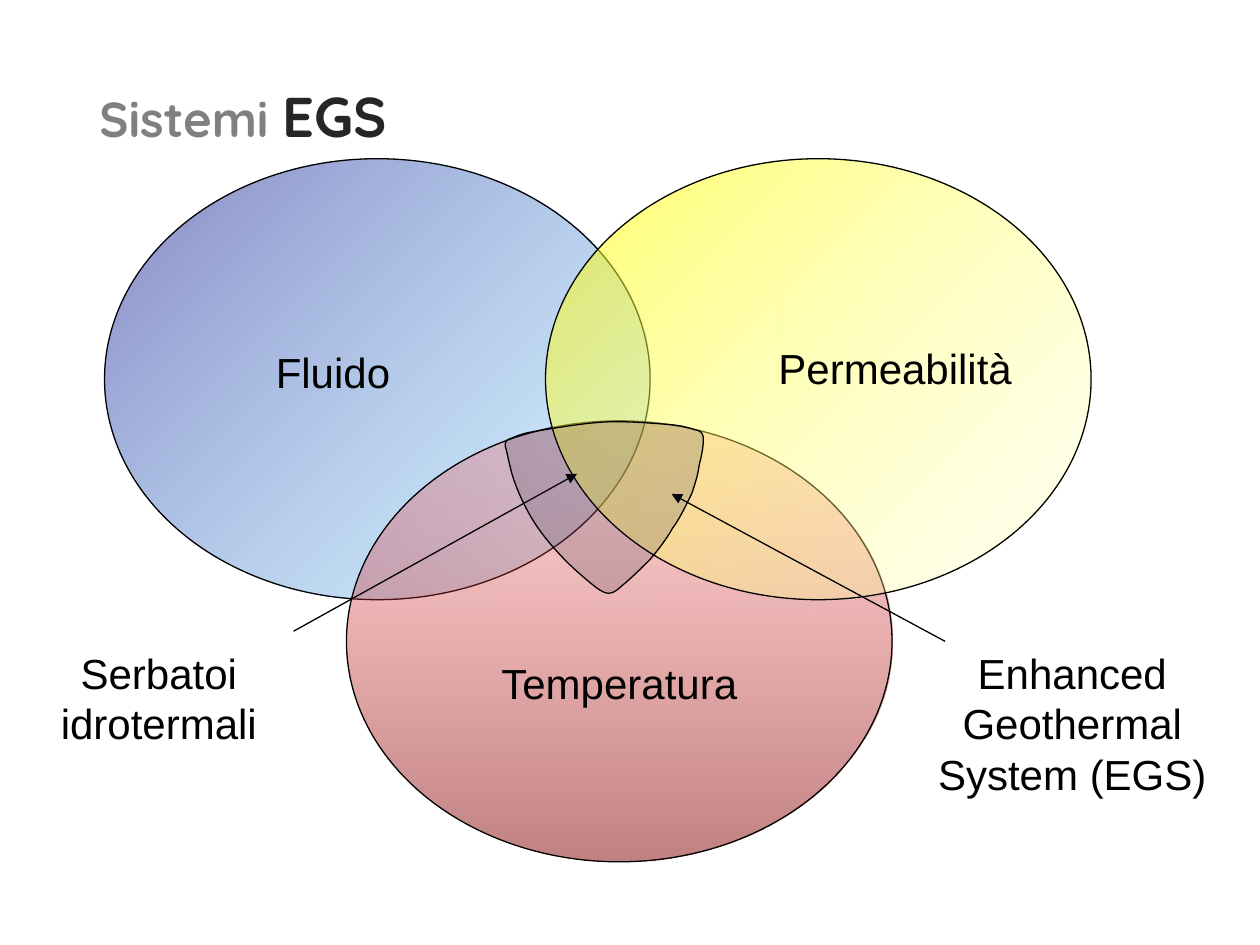
from lxml import etree
from pptx import Presentation
from pptx.dml.color import RGBColor
from pptx.enum.shapes import MSO_CONNECTOR, MSO_SHAPE
from pptx.enum.text import MSO_ANCHOR, MSO_AUTO_SIZE, PP_ALIGN
from pptx.oxml.ns import qn
from pptx.util import Inches, Pt

BLACK = "000000"
CIRCLE_SIZE = (4.33, 3.5)
OVERLAP_START = (4.01, 3.54)
OVERLAP_CURVES = [
    ((4.01, 3.48), (4.04, 3.49), (4.08, 3.47)),
    ((4.13, 3.45), (4.15, 3.44), (4.27, 3.42)),
    ((4.39, 3.4), (4.62, 3.36), (4.79, 3.35)),
    ((4.96, 3.34), (5.19, 3.36), (5.31, 3.37)),
    ((5.42, 3.38), (5.44, 3.39), (5.48, 3.4)),
    ((5.53, 3.42), (5.57, 3.41), (5.58, 3.46)),
    ((5.59, 3.51), (5.57, 3.62), (5.55, 3.69)),
    ((5.54, 3.77), (5.52, 3.83), (5.49, 3.92)),
    ((5.45, 4), (5.4, 4.11), (5.34, 4.19)),
    ((5.29, 4.28), (5.22, 4.37), (5.16, 4.44)),
    ((5.09, 4.51), (5.02, 4.58), (4.96, 4.63)),
    ((4.91, 4.67), (4.88, 4.71), (4.83, 4.71)),
    ((4.79, 4.71), (4.74, 4.67), (4.69, 4.63)),
    ((4.63, 4.58), (4.57, 4.53), (4.5, 4.46)),
    ((4.43, 4.39), (4.34, 4.29), (4.27, 4.19)),
    ((4.2, 4.09), (4.13, 3.95), (4.09, 3.84)),
    ((4.05, 3.74), (4.03, 3.6), (4.01, 3.54)),
]


def rgb(value):
    """Return the colour for a hex string."""
    return RGBColor.from_string(value)


def inches(values):
    """Return each value as a length in inches."""
    return [Inches(value) for value in values]


def set_opacities(shape, opacities):
    """Give the fill colours of a shape their opacities in percent."""
    colors = shape._element.spPr.iter(qn("a:srgbClr"))
    for color, opacity in zip(colors, opacities):
        etree.SubElement(color, qn("a:alpha"), val=str(opacity * 1000))


def style_outline(shape):
    """Draw a thin black outline without a shadow."""
    shape.shadow.inherit = False
    shape.line.color.rgb = rgb(BLACK)
    shape.line.width = Pt(0.75)


def add_run(paragraph, text, size, font="Arial", color=BLACK, bold=False):
    """Add one formatted run to a paragraph."""
    run = paragraph.add_run()
    run.text = text
    run.font.name = font
    run.font.size = Pt(size)
    run.font.bold = bold
    run.font.color.rgb = rgb(color)


def add_title(slide, box):
    """Place the two-tone title in its box."""
    frame = slide.shapes.add_textbox(*inches(box)).text_frame
    frame.word_wrap = True
    frame.vertical_anchor = MSO_ANCHOR.MIDDLE
    paragraph = frame.paragraphs[0]
    paragraph.line_spacing = 0.9
    add_run(paragraph, "Sistemi ", 28, "Quicksand", "808080", True)
    add_run(paragraph, "EGS", 32, "Quicksand", "262626", True)


def add_label(shapes, box, text, centered=True):
    """Place a label, either centred and wrapped or on a single line."""
    frame = shapes.add_textbox(*inches(box)).text_frame
    frame.word_wrap = centered
    frame.auto_size = MSO_AUTO_SIZE.SHAPE_TO_FIT_TEXT
    paragraph = frame.paragraphs[0]
    paragraph.alignment = PP_ALIGN.CENTER if centered else PP_ALIGN.LEFT
    add_run(paragraph, text, 24)


def add_circle(slide, corner, colors, opacities, angle, text, label_box, centered):
    """Group one translucent gradient circle of the diagram with its label."""
    shapes = slide.shapes.add_group_shape().shapes
    circle = shapes.add_shape(MSO_SHAPE.OVAL, *inches(corner + CIRCLE_SIZE))
    circle.fill.gradient()
    circle.fill.gradient_angle = 360 - angle
    for position, (stop, color) in enumerate(zip(circle.fill.gradient_stops, colors)):
        stop.position = position
        stop.color.rgb = rgb(color)
    set_opacities(circle, opacities)
    style_outline(circle)
    add_label(shapes, label_box, text, centered)


def add_pointer(slide, start, end):
    """Draw an arrow from a caption into the diagram."""
    pointer = slide.shapes.add_connector(MSO_CONNECTOR.STRAIGHT, *inches(start + end))
    pointer.line.color.rgb = rgb(BLACK)
    pointer.line.width = Pt(0.75)
    etree.SubElement(pointer.line._get_or_add_ln(), qn("a:tailEnd"), type="triangle")
    etree.SubElement(pointer._element.spPr, qn("a:effectLst"))


def bend_segments(outline, curves):
    """Turn the straight segments of an outline into cubic Bézier curves."""
    segments = list(outline._element.spPr.iter(qn("a:lnTo")))
    for segment, controls in zip(segments, curves):
        bend = etree.Element(qn("a:cubicBezTo"))
        for x, y in controls:
            etree.SubElement(bend, qn("a:pt"), x=str(Inches(x) - outline.left),
                             y=str(Inches(y) - outline.top))
        segment.getparent().replace(segment, bend)


def add_overlap(slide, start, curves):
    """Draw the shaded area where the three circles meet."""
    builder = slide.shapes.build_freeform(*inches(start))
    builder.add_line_segments([inches(controls[-1]) for controls in curves], close=True)
    overlap = builder.convert_to_shape()
    bend_segments(overlap, curves)
    overlap.fill.solid()
    overlap.fill.fore_color.rgb = rgb("212745")
    set_opacities(overlap, [18])
    style_outline(overlap)


def main():
    """Build the slide and save it."""
    deck = Presentation()
    deck.slide_width, deck.slide_height = Inches(10), Inches(7.5)
    slide = deck.slides.add_slide(deck.slide_layouts[6])
    add_title(slide, (0.69, 0.4, 7.95, 1.09))
    add_circle(slide, (0.83, 1.26), ("333399", "66CCFF"), (59, 26), 45,
               "Fluido", (2.09, 2.7, 1.11, 0.5), False)
    add_label(slide.shapes, (0, 5.09, 2.52, 0.9), "Serbatoi idrotermali")
    add_label(slide.shapes, (7.25, 5.09, 2.52, 1.3), "Enhanced Geothermal System (EGS)")
    add_circle(slide, (2.75, 3.34), ("FF5050", "800000"), (26, 50), 90,
               "Temperatura", (3.81, 5.17, 2.21, 0.5), True)
    add_circle(slide, (4.33, 1.26), ("FFFF00", "FFFFCC"), (59, 26), 45,
               "Permeabilità", (6.08, 2.67, 2.06, 0.5), False)
    add_pointer(slide, (2.33, 5.01), (4.58, 3.76))
    add_pointer(slide, (7.5, 5.09), (5.33, 3.92))
    add_overlap(slide, OVERLAP_START, OVERLAP_CURVES)
    deck.save("out.pptx")


if __name__ == "__main__":
    main()
